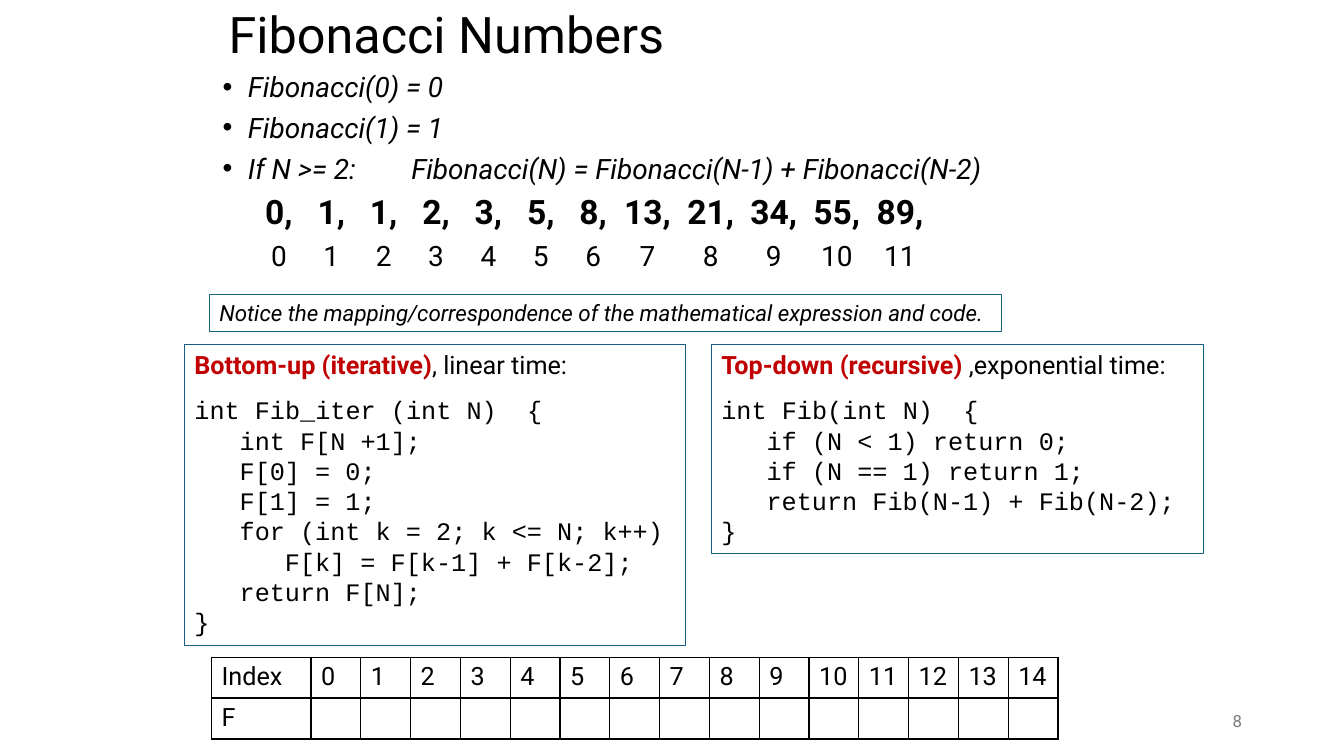
from dataclasses import dataclass

from lxml import etree
from pptx import Presentation
from pptx import util as u
from pptx.dml.color import RGBColor
from pptx.enum import shapes, text
from pptx.oxml.ns import qn

BLACK, RED, BLUE, GREY = "000000", "C00000", "156082", "797979"
SANS, MONO = "Roboto", "Courier New"
CODE_INDENT = 1.14  # three Courier characters at 18 pt


@dataclass
class Run:
    words: str
    size: float = 18
    color: str = BLACK
    font: str = SANS
    bold: bool = False
    italic: bool = False
    tracking: float = 0


@dataclass
class Para:
    runs: list[Run]
    line: float = 1.0
    before: float = 0
    indent: float = 0
    bullet: bool = False
    tabs: tuple[float, ...] = ()
    align: text.PP_ALIGN = text.PP_ALIGN.LEFT


@dataclass
class Box:
    left: float
    top: float
    width: float
    height: float
    paras: list[Para]
    framed: bool = False
    anchor: text.MSO_ANCHOR = text.MSO_ANCHOR.TOP


def rgb(code: str) -> RGBColor:
    return RGBColor.from_string(code)


def write_para(p, para: Para) -> None:
    p.alignment = para.align
    p.line_spacing = para.line
    p.space_before = u.Pt(para.before)
    pPr = p._p.get_or_add_pPr()
    if para.indent:
        pPr.set("marL", str(u.Cm(para.indent)))
    if para.bullet:
        pPr.set("indent", str(-u.Cm(para.indent)))
        etree.SubElement(pPr, qn("a:buFont"), typeface="Arial")
        etree.SubElement(pPr, qn("a:buChar"), char="•")
    if para.tabs:
        stops = etree.SubElement(pPr, qn("a:tabLst"))
        for pos in para.tabs:
            etree.SubElement(stops, qn("a:tab"), pos=str(u.Cm(pos)), algn="ctr")
    for run in para.runs:
        r = p.add_run()
        r.text = run.words
        r.font.name, r.font.size = run.font, u.Pt(run.size)
        r.font.bold, r.font.italic = run.bold, run.italic
        r.font.color.rgb = rgb(run.color)
        if run.tracking:
            r._r.get_or_add_rPr().set("spc", str(round(run.tracking * 100)))


def draw_box(s, box: Box) -> None:
    place = [u.Cm(v) for v in (box.left, box.top, box.width, box.height)]
    if box.framed:
        sp = s.shapes.add_shape(shapes.MSO_SHAPE.RECTANGLE, *place)
        sp.shadow.inherit = False
        sp.fill.background()
        sp.line.color.rgb = rgb(BLUE)
        sp.line.width = u.Pt(0.75)
    else:
        sp = s.shapes.add_textbox(*place)
    tf = sp.text_frame
    tf.word_wrap = True
    tf.vertical_anchor = box.anchor
    for i, para in enumerate(box.paras):
        write_para(tf.add_paragraph() if i else tf.paragraphs[0], para)


def code_paras(title: str, note: str, lines: list[tuple[int, str]]) -> list[Para]:
    heading = Para([Run(title, color=RED, bold=True), Run(note)])
    return [heading] + [
        Para([Run(words, font=MONO)], before=0 if i else 10.5, indent=level * CODE_INDENT)
        for i, (level, words) in enumerate(lines)
    ]


def draw_table(s, rows: list[list[str]], left: float, top: float,
               widths: list[float], row_height: float) -> None:
    frame = s.shapes.add_table(len(rows), len(widths), u.Cm(left), u.Cm(top),
                               u.Cm(sum(widths)), u.Cm(row_height * len(rows)))
    table = frame.table
    table.first_row = table.horz_banding = False
    for col, width in zip(table.columns, widths):
        col.width = u.Cm(width)
    for row, values in zip(table.rows, rows):
        row.height = u.Cm(row_height)
        for cell, value in zip(row.cells, values):
            if value:
                write_para(cell.text_frame.paragraphs[0], Para([Run(value)]))
            tcPr = cell._tc.get_or_add_tcPr()
            for side in ("lnL", "lnR", "lnT", "lnB"):
                ln = etree.SubElement(tcPr, qn(f"a:{side}"), w=str(u.Pt(1)))
                fill = etree.SubElement(ln, qn("a:solidFill"))
                etree.SubElement(fill, qn("a:srgbClr"), val=BLACK)
            cell.fill.background()


def main() -> None:
    prs = Presentation()
    prs.slide_width, prs.slide_height = u.Cm(33.87), u.Cm(19.05)
    s = prs.slides.add_slide(prs.slide_layouts[6])

    # Definition, then the sequence above its indices
    def rule(*runs: Run) -> Para:
        return Para(list(runs), 0.8, 10, indent=0.64, bullet=True)

    def italic(words: str, tracking: float = 0) -> Run:
        return Run(words, 20, italic=True, tracking=tracking)

    fib = [0, 1]
    while len(fib) < 12:
        fib.append(fib[-1] + fib[-2])
    # Columns widen where the numbers get two digits
    tabs = tuple(1.42 + 1.32 * k if k < 7 else 10.71 + 1.59 * (k - 7)
                 for k in range(len(fib)))
    sequence = "".join(f"\t{n}," for n in fib)
    indices = "".join(f"\t{k}" for k in range(len(fib)))
    definition = [
        rule(italic("Fibonacci(0) = 0")),
        rule(italic("Fibonacci(1) = 1")),
        rule(italic("If N >= 2:"), italic(" ", tracking=34.5),
             italic("Fibonacci(N) = Fibonacci(N-1) + Fibonacci(N-2)")),
        Para([Run(sequence, 24, bold=True)], 0.8, 10, tabs=tabs),
        Para([Run(indices, 20)], 0.8, 10, tabs=tabs),
    ]

    # Code for both approaches
    top_down = code_paras("Top-down (recursive) ", ",exponential time:", [
        (0, "int Fib(int N)  {"),
        (1, "if (N < 1) return 0;"),
        (1, "if (N == 1) return 1;"),
        (1, "return Fib(N-1) + Fib(N-2);"),
        (0, "}"),
    ])
    bottom_up = code_paras("Bottom-up (iterative)", ", linear time:", [
        (0, "int Fib_iter (int N)  {"),
        (1, "int F[N +1];"),
        (1, "F[0] = 0;"),
        (1, "F[1] = 1;"),
        (1, "for (int k = 2; k <= N; k++)"),
        (2, "F[k] = F[k-1] + F[k-2];"),
        (1, "return F[N];"),
        (0, "}"),
    ])
    notice = Run("Notice the mapping/correspondence of the mathematical "
                 "expression and code.", 16, italic=True)
    middle = text.MSO_ANCHOR.MIDDLE

    # Title, text boxes and page number
    for box in (
        Box(5.51, 0.2, 22.86, 1.47, [Para([Run("Fibonacci Numbers", 36)], 0.9)], anchor=middle),
        Box(5.36, 1.8, 22.86, 5.28, definition),
        Box(23.93, 17.65, 7.62, 1.02,
            [Para([Run("8", 12, GREY)], align=text.PP_ALIGN.RIGHT)], anchor=middle),
        Box(17.93, 8.69, 12.4, 5.26, top_down, framed=True),
        Box(4.65, 8.69, 12.62, 7.57, bottom_up, framed=True),
        Box(5.28, 7.42, 19.96, 0.94, [Para([notice])], framed=True),
    ):
        draw_box(s, box)

    # Table to fill in
    header = ["Index"] + [str(k) for k in range(15)]
    draw_table(s, [header, ["F"] + [""] * 15], 5.33, 16.56, [2.51] + [18.83 / 15] * 15, 1.03)

    prs.save("out.pptx")


if __name__ == "__main__":
    main()
